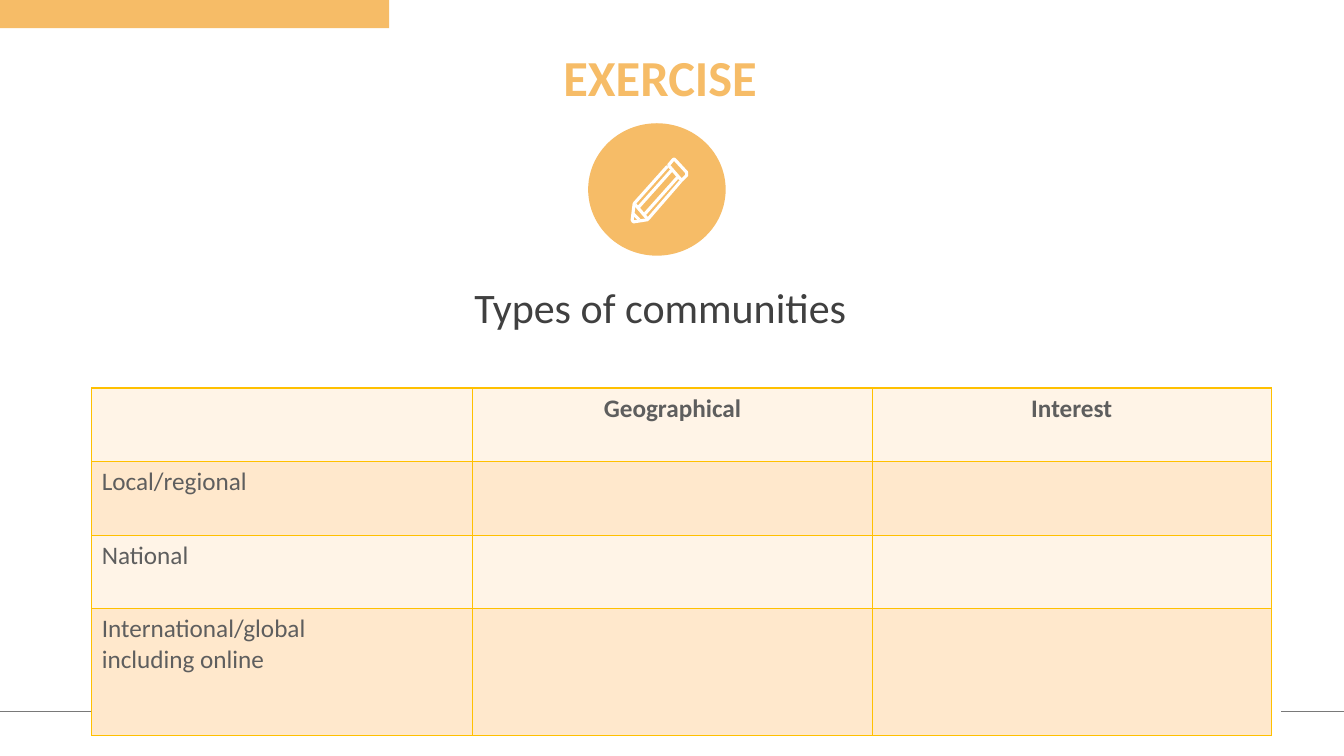
from lxml import etree
from pptx import Presentation
from pptx.dml.color import RGBColor
from pptx.enum.shapes import MSO_CONNECTOR, MSO_SHAPE
from pptx.enum.text import PP_ALIGN
from pptx.oxml.ns import qn
from pptx.util import Inches, Pt

RECTANGLE = MSO_SHAPE.RECTANGLE
CIRCLE = MSO_SHAPE.FLOWCHART_CONNECTOR
STRAIGHT = MSO_CONNECTOR.STRAIGHT
LEFT, CENTER = PP_ALIGN.LEFT, PP_ALIGN.CENTER

ORANGE, WHITE, GRID = "F6BC67", "FFFFFF", "FFC000"
RULE, HEADING, BODY = "797979", "404040", "5E5E5E"
ROW_FILLS = ("FFF4E7", "FFE8CC")


def color(value):
    return RGBColor.from_string(value)


class ExerciseSlide:
    font_name = "Calibri"

    def __init__(self, slide):
        self.slide = slide
        self.shapes = slide.shapes

    def style_paragraph(self, paragraph, size, font_color, bold, align):
        paragraph.alignment = align
        for run in paragraph.runs:
            run.font.name = self.font_name
            run.font.size = Pt(size)
            run.font.bold = bold
            run.font.color.rgb = color(font_color)

    def shape(self, kind, left, top, width, height, fill, line_width=None):
        shape = self.shapes.add_shape(
            kind, Inches(left), Inches(top), Inches(width), Inches(height))
        shape.shadow.inherit = False
        shape.fill.solid()
        shape.fill.fore_color.rgb = color(fill)
        if line_width:
            shape.line.color.rgb = color(fill)
            shape.line.width = Pt(line_width)
        else:
            shape.line.fill.background()

    def line(self, start, end, y):
        connector = self.shapes.add_connector(
            STRAIGHT, Inches(start), Inches(y), Inches(end), Inches(y))
        connector.line.color.rgb = color(RULE)
        connector.line.width = Pt(0.5)
        etree.SubElement(connector._element.spPr, qn("a:effectLst"))

    def outline(self, points, close=False):
        (x, y), *others = [(Inches(x), Inches(y)) for x, y in points]
        builder = self.shapes.build_freeform(x, y)
        builder.add_line_segments(others, close=close)
        shape = builder.convert_to_shape()
        shape.shadow.inherit = False
        shape.fill.background()
        shape.line.color.rgb = color(WHITE)
        shape.line.width = Pt(2.25)

    def text(self, text, left, top, width, height, size, font_color, bold, align):
        box = self.shapes.add_textbox(
            Inches(left), Inches(top), Inches(width), Inches(height))
        box.text_frame.word_wrap = True
        box.text_frame.text = text
        paragraph = box.text_frame.paragraphs[0]
        paragraph.line_spacing = 0.9
        self.style_paragraph(paragraph, size, font_color, bold, align)

    def border_cell(self, cell):
        properties = cell._tc.get_or_add_tcPr()
        for index, side in enumerate(("a:lnL", "a:lnR", "a:lnT", "a:lnB")):
            border = etree.Element(qn(side), w=str(Pt(1)))
            fill = etree.SubElement(border, qn("a:solidFill"))
            etree.SubElement(fill, qn("a:srgbClr"), val=GRID)
            properties.insert(index, border)

    def table(self, rows, left, top, widths, heights):
        frame = self.shapes.add_table(
            len(rows), len(widths), Inches(left), Inches(top),
            Inches(sum(widths)), Inches(sum(heights)))
        table = frame.table
        for column, width in zip(table.columns, widths):
            column.width = Inches(width)
        for row_index, (texts, height) in enumerate(zip(rows, heights)):
            table.rows[row_index].height = Inches(height)
            header = row_index == 0
            for column_index, text in enumerate(texts):
                cell = table.cell(row_index, column_index)
                cell.fill.solid()
                cell.fill.fore_color.rgb = color(ROW_FILLS[row_index % 2])
                self.border_cell(cell)
                cell.text_frame.text = text
                for paragraph in cell.text_frame.paragraphs:
                    self.style_paragraph(
                        paragraph, 18, BODY, header, CENTER if header else LEFT)


def main():
    presentation = Presentation()
    presentation.slide_width = Inches(13.33)
    presentation.slide_height = Inches(7.5)
    page = ExerciseSlide(
        presentation.slides.add_slide(presentation.slide_layouts[6]))

    # Top bar and footer rules
    page.shape(RECTANGLE, 0, 0, 3.86, 0.28, ORANGE)
    page.line(10.63, 0, 7.06)
    page.line(13.33, 12.71, 7.06)

    # Title and badge
    page.text("EXERCISE", 5.49, 0.48, 2.27, 0.69, 36, ORANGE, True, LEFT)
    page.shape(CIRCLE, 5.84, 1.23, 1.35, 1.3, ORANGE, 1)

    # Pencil: eraser, body, grooves, tip and collar
    page.outline([(6.81, 1.71), (6.7, 1.59), (6.69, 1.58), (6.68, 1.58),
                  (6.63, 1.64), (6.76, 1.79), (6.81, 1.74)], close=True)
    page.outline([(6.62, 1.65), (6.29, 2.02), (6.27, 2.18), (6.28, 2.2),
                  (6.29, 2.2), (6.42, 2.18), (6.43, 2.17), (6.75, 1.8)])
    page.outline([(6.72, 1.76), (6.39, 2.13)])
    page.outline([(6.33, 2.06), (6.66, 1.69)])
    page.outline([(6.34, 2.18), (6.28, 2.12)])
    page.outline([(6.3, 2.03), (6.42, 2.17)])

    # Table of communities
    page.table(
        [("", "Geographical", "Interest"),
         ("Local/regional", "", ""),
         ("National", "", ""),
         ("International/global\nincluding online", "", "")],
        0.91, 3.85, (3.78, 3.96, 3.96), (0.73, 0.73, 0.73, 1.26))

    # Subtitle
    page.text("Types of communities", 4.36, 2.8, 4.38, 0.69,
              30, HEADING, False, CENTER)

    presentation.save("out.pptx")


if __name__ == "__main__":
    main()
